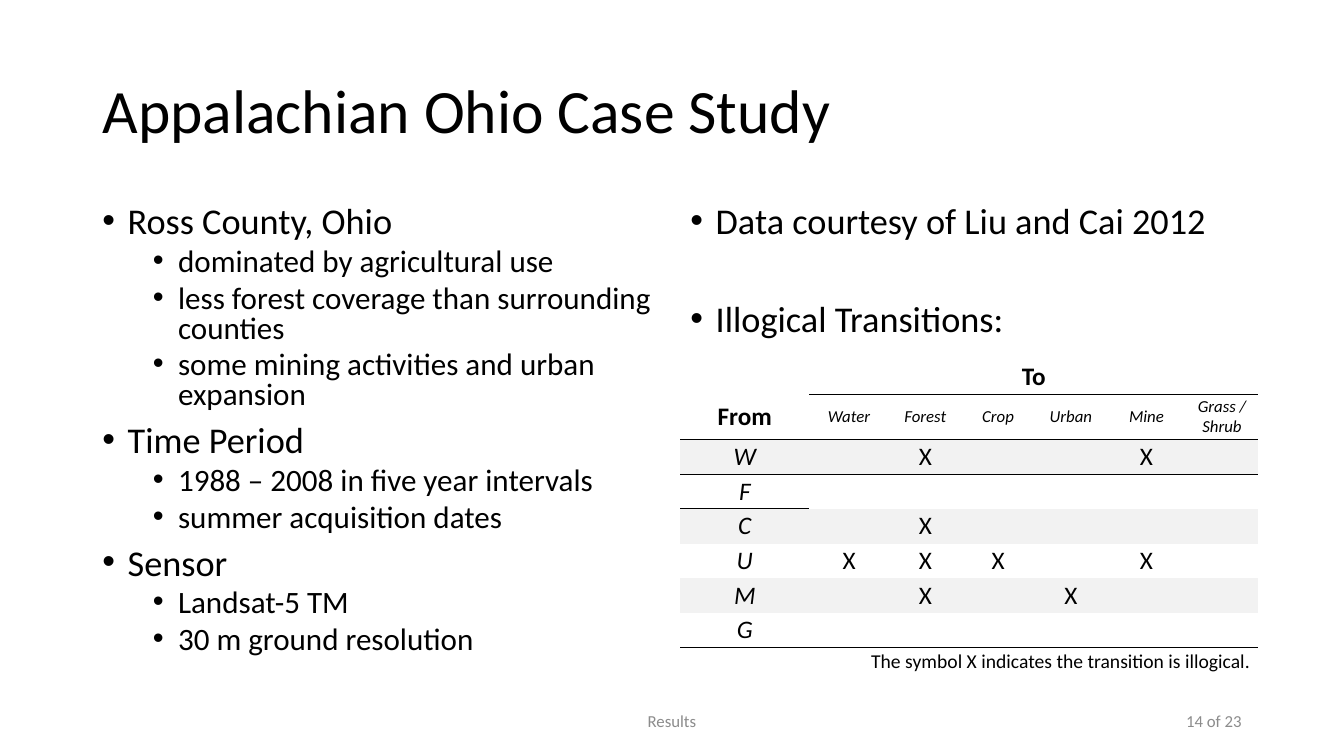
from collections import namedtuple
from lxml.etree import SubElement
from pptx import Presentation
from pptx.dml.color import RGBColor as RGB
from pptx.enum.text import MSO_ANCHOR as Anchor, MSO_AUTO_SIZE as Fit, PP_ALIGN as Align
from pptx.oxml.ns import qn
from pptx.util import Pt

Theme = namedtuple("Theme", "face ink mute band head item sub cell tiny note")
theme = Theme("Calibri", RGB(0, 0, 0), RGB(0x8C, 0x8C, 0x8C), RGB(0xF2, 0xF2, 0xF2),
              44, 25.9, 22.2, 18, 12, 14)

TITLE = "Appalachian Ohio Case Study"
STUDY = (
    ("Ross County, Ohio", 0, 10),
    ("dominated by agricultural use", 1, 5),
    ("less forest coverage than surrounding counties", 1, 5),
    ("some mining activities and urban expansion", 1, 5),
    ("Time Period", 0, 10),
    ("1988 – 2008 in five year intervals", 1, 5),
    ("summer acquisition dates", 1, 5),
    ("Sensor", 0, 10),
    ("Landsat-5 TM", 1, 5),
    ("30 m ground resolution", 1, 5),
)
DATA = (("Data courtesy of Liu and Cai 2012", 0, 10), ("Illogical Transitions:", 0, 45))
LANDS = ("Water", "Forest", "Crop", "Urban", "Mine", "Grass / Shrub")
MARKS = {"W": (2, 5), "F": (), "C": (2,), "U": (1, 2, 3, 5), "M": (2, 4), "G": ()}
NOTE = "The symbol X indicates the transition is illogical."
FEET = (("Results", 318, 324, Align.CENTER), ("14 of 23", 678, 216, Align.RIGHT))

WIDE = (92, 57, 52, 52, 52, 56, 52)
HIGH = (24.8, 32.2) + (24.8,) * len(MARKS) + (20,)
RULES = ((0, 1, 7), (1, 0, 7), (2, 0, 1), (7, 0, 7))
NO_GRID = "{2D5ABB26-0587-4C30-8999-92F81FD0307C}"


def place(shape, left, top, width, height):
    shape.left, shape.top, shape.width, shape.height = map(Pt, (left, top, width, height))


def style(para, size, align=Align.LEFT, ink=theme.ink, bold=False, slant=False):
    para.alignment = align
    font = para.font
    font.name, font.size, font.bold, font.italic = theme.face, Pt(size), bold, slant
    font.color.rgb = ink


def bullets(shape, left, items):
    place(shape, left, 144, 408, 343)
    frame = shape.text_frame
    frame.auto_size = Fit.NONE
    frame.text = "\n".join(text for text, level, gap in items)
    for para, (text, level, gap) in zip(frame.paragraphs, items):
        para.level = level
        para.line_spacing = 0.8
        para.space_before, para.space_after = Pt(gap), Pt(0)
        props = para._p.get_or_add_pPr()
        props.set("marL", str(Pt(18 + 36 * level)))
        props.set("indent", str(Pt(-18)))
        SubElement(props, qn("a:buFont"), typeface="Arial")
        SubElement(props, qn("a:buChar"), char="•")
        style(para, theme.sub if level else theme.item)


def write(cell, text, size=theme.cell, align=Align.CENTER, **face):
    cell.text = text
    style(cell.text_frame.paragraphs[0], size, align, **face)


def edge(cell, side):
    line = SubElement(cell._tc.get_or_add_tcPr(), qn("a:" + side), w=str(Pt(1)))
    fill = SubElement(line, qn("a:solidFill"))
    SubElement(fill, qn("a:srgbClr"), val=str(theme.ink))


def matrix(slide):
    frame = slide.shapes.add_table(len(HIGH), len(WIDE), Pt(486), Pt(257),
                                   Pt(sum(WIDE)), Pt(sum(HIGH)))
    grid = frame.table
    grid.first_row = grid.horz_banding = False
    grid._tbl.tblPr.find(qn("a:tableStyleId")).text = NO_GRID
    for col, width in zip(grid.columns, WIDE):
        col.width = Pt(width)
    for row, height in zip(grid.rows, HIGH):
        row.height = Pt(height)
    for cell in grid.iter_cells():
        cell.margin_left = cell.margin_right = Pt(5.8)
        cell.margin_top = cell.margin_bottom = Pt(1.4)
        cell.vertical_anchor = Anchor.MIDDLE
    for row, first, stop in RULES:
        for col in range(first, stop):
            edge(grid.cell(row, col), "lnB")
            edge(grid.cell(row + 1, col), "lnT")
    last = len(HIGH) - 1
    grid.cell(0, 1).merge(grid.cell(0, 6))
    grid.cell(last, 0).merge(grid.cell(last, 6))
    write(grid.cell(0, 1), "To", bold=True)
    write(grid.cell(1, 0), "From", bold=True)
    for col, land in enumerate(LANDS, 1):
        write(grid.cell(1, col), land, theme.tiny, slant=True)
    for row, (land, marks) in enumerate(MARKS.items(), 2):
        write(grid.cell(row, 0), land, slant=True)
        for col in marks:
            write(grid.cell(row, col), "X")
        for col in range(len(WIDE)):
            fill = grid.cell(row, col).fill
            if row % 2:
                fill.background()
            else:
                fill.solid()
                fill.fore_color.rgb = theme.band
    write(grid.cell(last, 0), NOTE, theme.note, Align.RIGHT)


def main():
    deck = Presentation()
    deck.slide_width, deck.slide_height = Pt(960), Pt(540)
    slide = deck.slides.add_slide(deck.slide_layouts[3])
    head, left, right = slide.placeholders
    place(head, 66, 28.8, 828, 104.4)
    frame = head.text_frame
    frame.text = TITLE
    frame.auto_size, frame.vertical_anchor = Fit.NONE, Anchor.MIDDLE
    frame.paragraphs[0].line_spacing = 0.9
    style(frame.paragraphs[0], theme.head)
    bullets(left, 66, STUDY)
    bullets(right, 486, DATA)
    matrix(slide)
    for text, x, width, align in FEET:
        frame = slide.shapes.add_textbox(Pt(x), Pt(500.4), Pt(width), Pt(28.8)).text_frame
        frame.word_wrap, frame.vertical_anchor = True, Anchor.MIDDLE
        frame.text = text
        style(frame.paragraphs[0], theme.tiny, align, theme.mute)
    deck.save("out.pptx")


if __name__ == "__main__":
    main()
